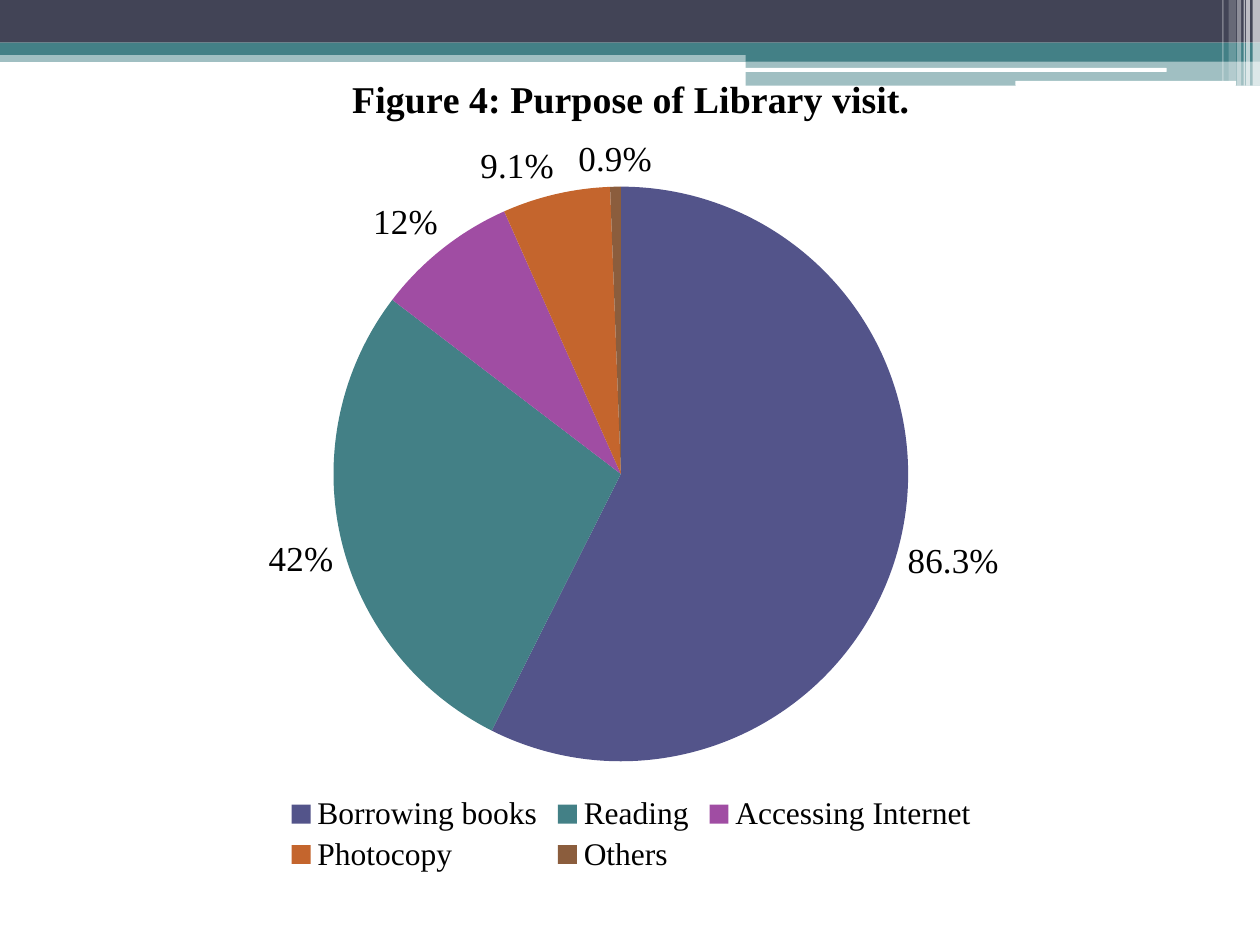
from dataclasses import dataclass

from lxml import etree
from pptx import Presentation
from pptx.chart.data import CategoryChartData
from pptx.dml.color import RGBColor
from pptx.enum import chart as kinds, shapes
from pptx.oxml import ns
from pptx.util import Cm, Pt

FONT = "Times New Roman"
HUES = {
    "slate": "424456", "teal": "438086", "white": "FFFFFF", "black": "000000",
    "indigo": "53548A", "purple": "A04DA3", "orange": "C4652D", "brown": "8B5D3D",
}


@dataclass
class Bar:
    left: float
    top: float
    width: float
    height: float
    hue: str
    alpha: int = 100
    round: bool = False


@dataclass
class Slice:
    name: str
    value: float
    hue: str


# Header bands, then the white stripes at the right edge (cm)
BANDS = [
    Bar(0, 1.02, 25.4, 0.23, "teal", 50),
    Bar(0, 0, 25.4, 0.86, "slate"),
    Bar(0, 0.86, 25.4, 0.25, "teal"),
    Bar(15.03, 0.99, 10.37, 0.25, "teal"),
    Bar(15.03, 1.23, 10.37, 0.5, "teal", 50),
    Bar(15.01, 1.37, 8.51, 0.08, "white", round=True),
    Bar(20.47, 1.63, 4.45, 0.1, "white", round=True),
]
STRIPES = [
    Bar(left, 0, width, height, "white", alpha)
    for left, width, height, alpha in [
        (25.25, 0.15, 1.73, 65), (25.12, 0.08, 1.73, 65), (25.07, 0.03, 1.73, 60),
        (24.94, 0.08, 1.73, 40), (24.77, 0.15, 1.63, 20), (24.64, 0.03, 1.63, 30),
    ]
]
SLICES = [
    Slice("Borrowing books", 86.3, "indigo"),
    Slice("Reading", 42, "teal"),
    Slice("Accessing Internet", 12, "purple"),
    Slice("Photocopy", 9.1, "orange"),
    Slice("Others", 0.9, "brown"),
]


def paint(fill, hue: str) -> None:
    fill.solid()
    fill.fore_color.rgb = RGBColor.from_string(HUES[hue])


def style(font, size: float, bold: bool = False) -> None:
    font.name, font.size, font.bold = FONT, Pt(size), bold
    font.color.rgb = RGBColor.from_string(HUES["black"])


def draw_bar(slide, bar: Bar) -> None:
    kind = shapes.MSO_SHAPE.ROUNDED_RECTANGLE if bar.round else shapes.MSO_SHAPE.RECTANGLE
    shape = slide.shapes.add_shape(
        kind, Cm(bar.left), Cm(bar.top), Cm(bar.width), Cm(bar.height))
    shape.shadow.inherit = False
    shape.line.fill.background()
    paint(shape.fill, bar.hue)
    if bar.alpha < 100:
        color = shape.fill._xPr.find(".//" + ns.qn("a:srgbClr"))
        etree.SubElement(color, ns.qn("a:alpha"), val=str(bar.alpha * 1000))


def place_plot(chart, **box: float) -> None:
    """Fix the inner plot area, as fractions of the chart."""
    area = chart._chartSpace.find(".//" + ns.qn("c:plotArea"))
    for old in area.findall(ns.qn("c:layout")):
        area.remove(old)
    layout = etree.Element(ns.qn("c:layout"))
    area.insert(0, layout)
    manual = etree.SubElement(layout, ns.qn("c:manualLayout"))
    rules = {"layoutTarget": "inner", "xMode": "edge", "yMode": "edge", **box}
    for tag, val in rules.items():
        etree.SubElement(manual, ns.qn("c:" + tag), val=str(val))


def draw_pie(slide, title: str, parts: list[Slice]) -> None:
    data = CategoryChartData(number_format="General")
    data.categories = [part.name for part in parts]
    data.add_series("Series 1", [part.value for part in parts])
    chart = slide.shapes.add_chart(
        kinds.XL_CHART_TYPE.PIE, Cm(2.31), Cm(0.91), Cm(20.83), Cm(16.79), data).chart
    style(chart.font, 18)

    # Title
    chart.has_title = True
    run = chart.chart_title.text_frame.paragraphs[0].add_run()
    run.text = title
    style(run.font, 21.6, bold=True)
    chart.chart_title.include_in_layout = False

    # Legend
    chart.has_legend = True
    chart.legend.position = kinds.XL_LEGEND_POSITION.BOTTOM
    chart.legend.include_in_layout = False
    style(chart.legend.font, 18)

    # Slices and labels
    plot = chart.plots[0]
    plot.vary_by_categories = True
    for spot, part in enumerate(parts):
        paint(plot.series[0].points[spot].format.fill, part.hue)
    plot.has_data_labels = True
    labels = plot.data_labels
    labels.show_value = True
    labels.show_percentage = False
    labels.number_format = 'General"%"'
    labels.number_format_is_linked = False
    labels.position = kinds.XL_LABEL_POSITION.OUTSIDE_END
    style(labels.font, 20)
    place_plot(chart, x=0.21, y=0.17, w=0.56, h=0.69)


def main() -> None:
    deck = Presentation()
    deck.slide_width, deck.slide_height = Cm(25.4), Cm(19.05)
    slide = deck.slides.add_slide(deck.slide_layouts[6])
    for bar in BANDS + STRIPES:
        draw_bar(slide, bar)
    draw_pie(slide, "Figure 4: Purpose of Library visit.", SLICES)
    deck.save("out.pptx")


if __name__ == "__main__":
    main()
